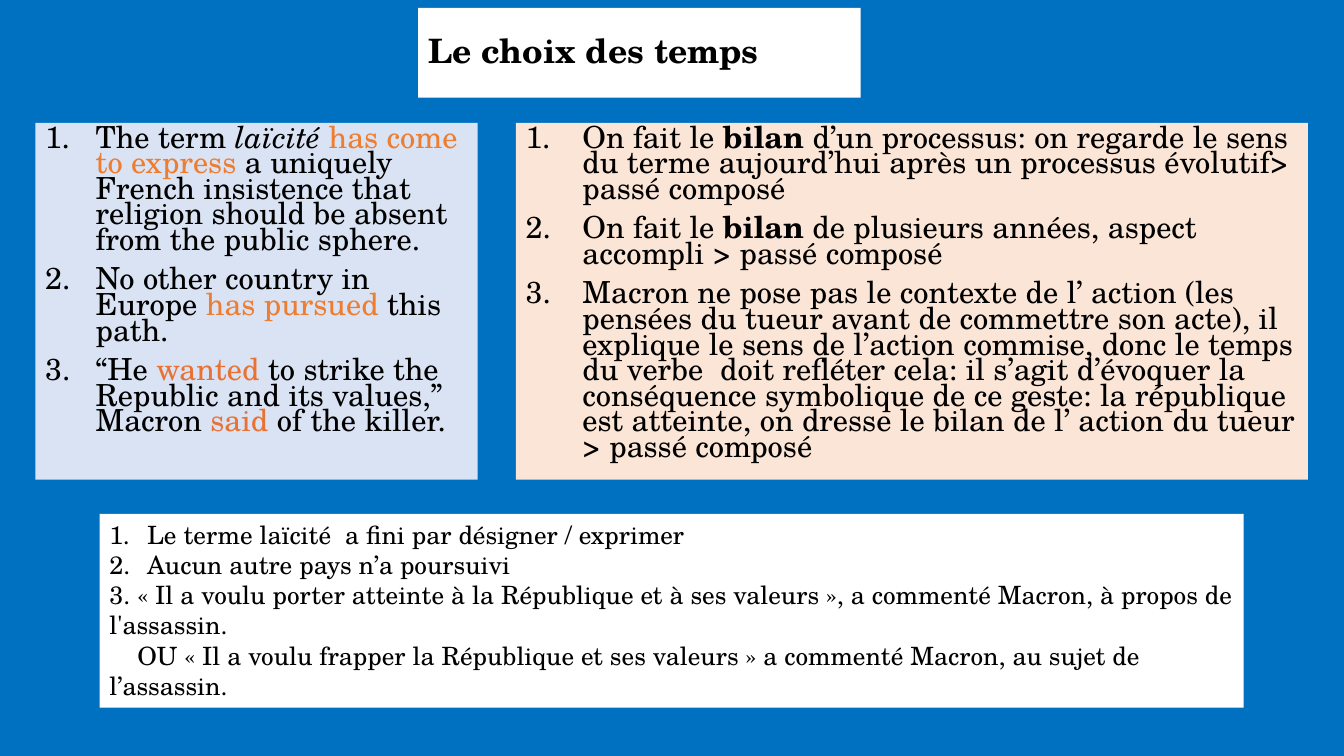
from pptx import Presentation
from pptx.dml.color import RGBColor
from pptx.enum.text import MSO_ANCHOR, MSO_AUTO_SIZE, PP_ALIGN
from pptx.oxml.xmlchemy import OxmlElement
from pptx.util import Cm, Pt

FONT = "TeX Gyre Schola"
BLUE = RGBColor(0x00, 0x70, 0xC0)
PALE_BLUE = RGBColor(0xDA, 0xE3, 0xF3)
PALE_ORANGE = RGBColor(0xFB, 0xE5, 0xD6)
WHITE = RGBColor(0xFF, 0xFF, 0xFF)
BLACK = RGBColor(0x00, 0x00, 0x00)
ORANGE = RGBColor(0xED, 0x7D, 0x31)
DEEP_ORANGE = RGBColor(0xE9, 0x71, 0x32)

# Run styles: color, bold, italic
PLAIN = (BLACK, False, False)
BOLD = (BLACK, True, False)
ITALIC = (BLACK, False, True)
VERB = (ORANGE, False, False)
PAST_VERB = (DEEP_ORANGE, False, False)

TITLE = "Le choix des temps"
ENGLISH = [
    [("The term ", PLAIN), ("laïcité ", ITALIC), ("has come to express ", VERB),
     ("a uniquely French insistence that religion should be absent "
      "from the public sphere.", PLAIN)],
    [("No other country in Europe ", PLAIN), ("has pursued ", VERB),
     ("this path.", PLAIN)],
    [("“He ", PLAIN), ("wanted ", PAST_VERB),
     ("to strike the Republic and its values,” Macron ", PLAIN),
     ("said ", PAST_VERB), ("of the killer.", PLAIN)],
]
ANALYSIS = [
    [("On fait le ", PLAIN), ("bilan ", BOLD),
     ("d’un processus: on regarde le sens du terme aujourd’hui après "
      "un processus évolutif> passé composé", PLAIN)],
    [("On fait le ", PLAIN), ("bilan", BOLD),
     (" de plusieurs années, aspect accompli > passé composé", PLAIN)],
    [("Macron ne pose pas le contexte de l’ action (les pensées du tueur avant "
      "de commettre son acte), il explique le sens de l’action commise, donc "
      "le temps du verbe  doit refléter cela: il s’agit d’évoquer la "
      "conséquence symbolique de ce geste: la république est atteinte, on "
      "dresse le bilan de l’ action du tueur > passé composé", PLAIN)],
]
# Text, numbered, first-line indent in cm
TRANSLATIONS = [
    ("Le terme laïcité  a fini par désigner / exprimer", True, 0),
    ("Aucun autre pays n’a poursuivi", True, 0),
    ("3. « Il a voulu porter atteinte à la République et à ses valeurs », "
     "a commenté Macron, à propos de l'assassin.", False, 0),
    ("OU « Il a voulu frapper la République et ses valeurs » "
     "a commenté Macron, au sujet de l’assassin.", False, 0.7),
]

PANEL_TOP, PANEL_HEIGHT = 3.1, 8.99
PANELS = [  # left, width, fill, hanging indent, items
    (0.89, 11.15, PALE_BLUE, 1.27, ENGLISH),
    (13, 19.96, PALE_ORANGE, 1.43, ANALYSIS),
]


def fill_solid(sp, color):
    sp.fill.solid()
    sp.fill.fore_color.rgb = color


def add_box(left, top, width, height, color):
    sp = s.shapes.add_textbox(Cm(left), Cm(top), Cm(width), Cm(height))
    fill_solid(sp, color)
    sp.text_frame.word_wrap = True
    return sp.text_frame


def add_run(p, text, size, style=PLAIN):
    r = p.add_run()
    r.text = text
    r.font.name = FONT
    r.font.size = Pt(size)
    r.font.color.rgb, r.font.bold, r.font.italic = style


def next_paragraph(tf, i):
    return tf.add_paragraph() if i else tf.paragraphs[0]


def set_indent(p, left, first):
    pPr = p._p.get_or_add_pPr()
    pPr.set("marL", str(Cm(left)))
    pPr.set("indent", str(Cm(first)))
    return pPr


def number(p, hanging):
    num = OxmlElement("a:buAutoNum")
    num.set("type", "arabicPeriod")
    set_indent(p, hanging, -hanging).append(num)


prs = Presentation()
prs.slide_width, prs.slide_height = Cm(33.87), Cm(19.05)
s = prs.slides.add_slide(prs.slide_layouts[5])
fill_solid(s.background, BLUE)

title = s.shapes.title
title.left, title.top, title.width, title.height = Cm(10.54), Cm(0.2), Cm(11.15), Cm(2.26)
fill_solid(title, WHITE)
title.text_frame.vertical_anchor = MSO_ANCHOR.MIDDLE
p = title.text_frame.paragraphs[0]
p.alignment = PP_ALIGN.LEFT
p.line_spacing = 0.9
add_run(p, TITLE, 24, BOLD)

for left, width, color, hanging, items in PANELS:
    tf = add_box(left, PANEL_TOP, width, PANEL_HEIGHT, color)
    for i, runs in enumerate(items):
        p = next_paragraph(tf, i)
        number(p, hanging)
        p.line_spacing = 0.7
        p.space_before = Pt(10 if i else 0)
        for text, style in runs:
            add_run(p, text, 21.7, style)

tf = add_box(2.51, 12.95, 28.83, 4.88, WHITE)
tf.auto_size = MSO_AUTO_SIZE.SHAPE_TO_FIT_TEXT
for i, (text, numbered, first) in enumerate(TRANSLATIONS):
    p = next_paragraph(tf, i)
    if numbered:
        number(p, 0.95)
    else:
        set_indent(p, 0, first)
    add_run(p, text, 18)

prs.save("out.pptx")
